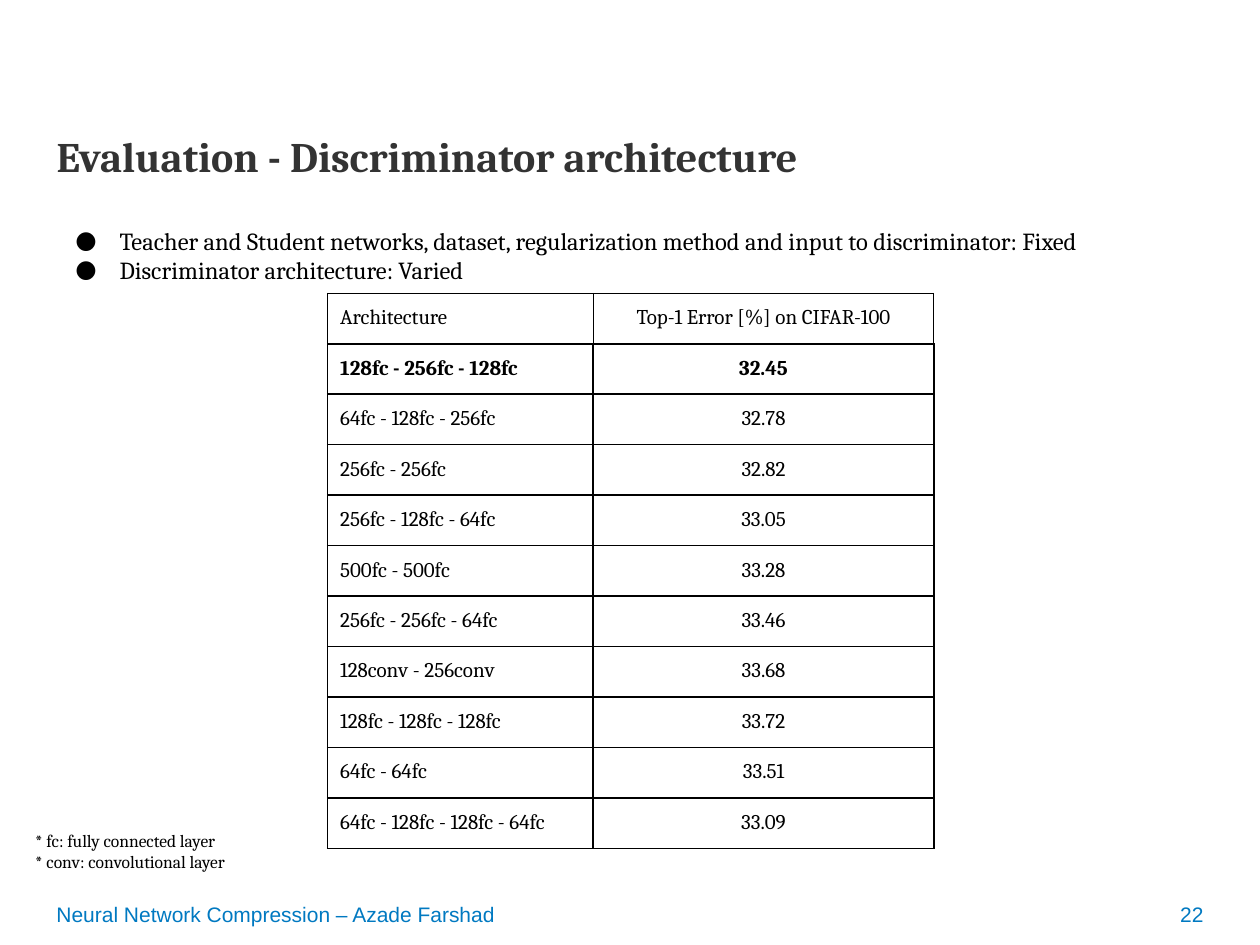
from lxml import etree
from pptx import Presentation
from pptx import util as u
from pptx.dml.color import RGBColor
from pptx.enum import text
from pptx.oxml import ns

Pt = u.Pt
SERIF, SANS = "Cambria", "Arial"
BLACK, DARK, BLUE = "000000", "333333", "0079C1"

ROWS = [
    ("Architecture", "Top-1 Error [%] on CIFAR-100"),
    ("128fc - 256fc - 128fc", "32.45"),
    ("64fc - 128fc - 256fc", "32.78"),
    ("256fc - 256fc", "32.82"),
    ("256fc - 128fc - 64fc", "33.05"),
    ("500fc - 500fc", "33.28"),
    ("256fc - 256fc - 64fc", "33.46"),
    ("128conv - 256conv", "33.68"),
    ("128fc - 128fc - 128fc", "33.72"),
    ("64fc - 64fc", "33.51"),
    ("64fc - 128fc - 128fc - 64fc", "33.09"),
]
BEST_ROW = 1


def color(value):
    """Turn a hex string into a colour."""
    return RGBColor.from_string(value)


def add_child(parent, tag, **attributes):
    """Append a DrawingML element to the parent."""
    return etree.SubElement(parent, ns.qn(tag), attributes)


def format_paragraph(paragraph, font, size, value, bold=False, align=text.PP_ALIGN.LEFT):
    """Set the alignment of a paragraph and the font of its runs."""
    paragraph.alignment = align
    for run in paragraph.runs:
        run.font.name = font
        run.font.size = Pt(size)
        run.font.bold = bold
        run.font.color.rgb = color(value)


def add_text(slide, box, content, font, size, value, inset=3.6,
             anchor=text.MSO_ANCHOR.TOP, **style):
    """Place a wrapped text box and return its text frame."""
    text_frame = slide.shapes.add_textbox(*map(Pt, box)).text_frame
    text_frame.word_wrap = True
    text_frame.vertical_anchor = anchor
    text_frame.margin_left = text_frame.margin_right = Pt(7.2)
    text_frame.margin_top = text_frame.margin_bottom = Pt(inset)
    text_frame.text = content
    for paragraph in text_frame.paragraphs:
        format_paragraph(paragraph, font, size, value, **style)
    return text_frame


def add_bullets(slide, box, lines):
    """Place a list with round bullets."""
    text_frame = add_text(slide, box, "\n".join(lines), SERIF, 14, BLACK, inset=7.2)
    for paragraph in text_frame.paragraphs:
        properties = paragraph._p.get_or_add_pPr()
        properties.set("marL", str(Pt(36)))
        properties.set("indent", str(Pt(-25.2)))
        bullet_color = add_child(properties, "a:buClr")
        add_child(bullet_color, "a:srgbClr", val=BLACK)
        add_child(properties, "a:buFont", typeface=SERIF)
        add_child(properties, "a:buChar", char="●")


def add_borders(cell, widths):
    """Draw the left, right, top and bottom borders of a cell."""
    properties = cell._tc.get_or_add_tcPr()
    for side, width in zip("LRTB", widths):
        line = add_child(properties, f"a:ln{side}", w=str(Pt(width)))
        fill = add_child(line, "a:solidFill")
        add_child(fill, "a:srgbClr", val=BLACK)


def add_results(slide, box, column_widths):
    """Place the table of architectures and errors."""
    frame = slide.shapes.add_table(len(ROWS), len(column_widths), *map(Pt, box))
    table = frame.table
    table.first_row = table.horz_banding = False
    for column, width in zip(table.columns, column_widths):
        column.width = Pt(width)
    for row_index, values in enumerate(ROWS):
        table.rows[row_index].height = Pt(box[3] / len(ROWS))
        widths = (1, 1, 1, 1) if row_index else (0.75, 0.75, 0.75, 1)
        for column_index, value in enumerate(values):
            cell = table.cell(row_index, column_index)
            cell.margin_left = cell.margin_right = Pt(7.2)
            cell.margin_top = cell.margin_bottom = Pt(7.2)
            add_borders(cell, widths)
            cell.fill.background()
            cell.text_frame.text = value
            align = text.PP_ALIGN.CENTER if column_index else text.PP_ALIGN.LEFT
            format_paragraph(cell.text_frame.paragraphs[0], SERIF, 12, BLACK,
                             row_index == BEST_ROW, align)


def add_footer(slide, box):
    """Place the talk name at the left and the page number at the right."""
    left, top, width, height = box
    number_width = 45.4
    middle = text.MSO_ANCHOR.MIDDLE
    add_text(slide, (left, top, 493, height), "Neural Network Compression – Azade Farshad",
             SANS, 12, BLUE, anchor=middle)
    add_text(slide, (left + width - number_width, top, number_width, height), "22",
             SANS, 12, BLUE, anchor=middle, align=text.PP_ALIGN.RIGHT)


def main():
    """Build and save the slide."""
    presentation = Presentation()
    presentation.slide_width, presentation.slide_height = Pt(720), Pt(540)
    slide = presentation.slides.add_slide(presentation.slide_layouts[6])
    add_footer(slide, (25.2, 510.5, 669.6, 23.8))
    add_text(slide, (25.2, 71.3, 669, 68.4), "Evaluation - Discriminator architecture",
             SERIF, 24, DARK, bold=True)
    add_results(slide, (187.2, 167.6, 346.4, 309.9), (151.8, 194.6))
    add_bullets(slide, (25.2, 121.7, 641, 50.4), [
        "Teacher and Student networks, dataset, regularization method "
        "and input to discriminator: Fixed",
        "Discriminator architecture: Varied",
    ])
    add_text(slide, (13, 467.3, 694, 35.3),
             "* fc: fully connected layer\n* conv: convolutional layer",
             SERIF, 10, BLACK, inset=7.2)
    presentation.save("out.pptx")


if __name__ == "__main__":
    main()
